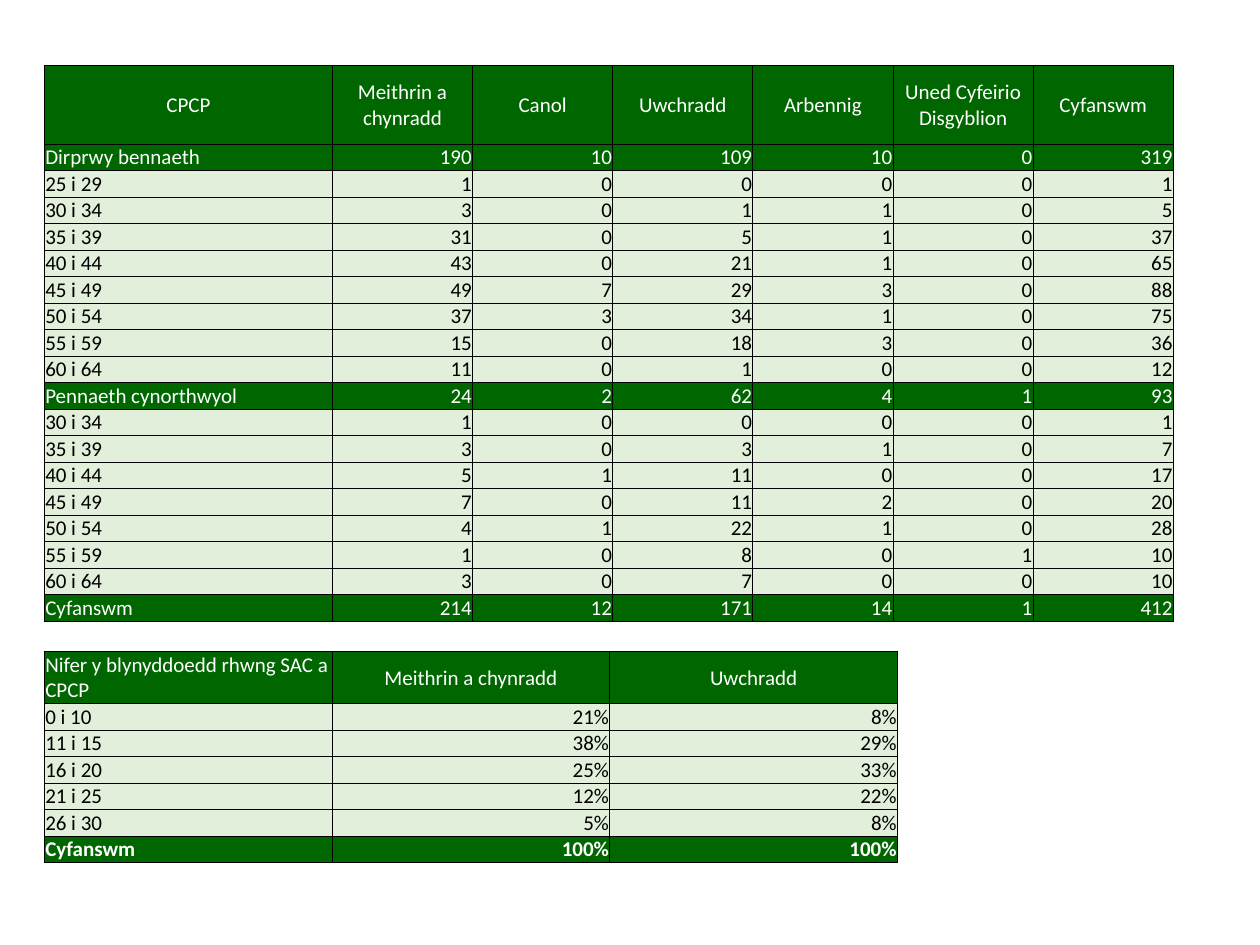
from lxml import etree
from pptx import Presentation
from pptx.dml.color import RGBColor
from pptx.enum.text import MSO_ANCHOR, PP_ALIGN
from pptx.oxml.ns import qn
from pptx.util import Pt

DARK_GREEN = RGBColor(0x00, 0x66, 0x00)
PALE_GREEN = RGBColor(0xE2, 0xEF, 0xDA)
WHITE = RGBColor(0xFF, 0xFF, 0xFF)
BLACK = RGBColor(0x00, 0x00, 0x00)
LEFT, CENTER, RIGHT = PP_ALIGN.LEFT, PP_ALIGN.CENTER, PP_ALIGN.RIGHT
TOP, MIDDLE, BOTTOM = MSO_ANCHOR.TOP, MSO_ANCHOR.MIDDLE, MSO_ANCHOR.BOTTOM
ROW_HEIGHT = 15.14
TABLE_LEFT = 25.4


def write_cell(cell, text, align=LEFT, anchor=TOP, fill=PALE_GREEN, color=BLACK, bold=False):
    cell.margin_left = cell.margin_right = cell.margin_top = Pt(0.5)
    cell.margin_bottom = 0
    cell.vertical_anchor = anchor
    paragraph = cell.text_frame.paragraphs[0]
    paragraph.alignment = align
    run = paragraph.add_run()
    run.text = text
    run.font.name = "Calibri"
    run.font.size = Pt(12)
    run.font.bold = bold
    run.font.color.rgb = color
    # Thin black borders come before the fill in the cell properties
    properties = cell._tc.get_or_add_tcPr()
    for side in ("a:lnL", "a:lnR", "a:lnT", "a:lnB"):
        line = etree.SubElement(properties, qn(side), w=str(Pt(0.5)))
        solid = etree.SubElement(line, qn("a:solidFill"))
        etree.SubElement(solid, qn("a:srgbClr"), val=str(BLACK))
    cell.fill.solid()
    cell.fill.fore_color.rgb = fill


def add_grid(slide, top, column_widths, header_height, row_count):
    heights = [header_height] + [ROW_HEIGHT] * (row_count - 1)
    grid = slide.shapes.add_table(row_count, len(column_widths), Pt(TABLE_LEFT), Pt(top),
                                  Pt(sum(column_widths)), Pt(sum(heights))).table
    grid.horz_banding = False
    for column, width in zip(grid.columns, column_widths):
        column.width = Pt(width)
    for row, height in zip(grid.rows, heights):
        row.height = Pt(height)
    return grid


prs = Presentation()
prs.slide_width, prs.slide_height = Pt(720), Pt(540)
slide = prs.slides.add_slide(prs.slide_layouts[6])

# Holders by role, age band and school sector
age_rows = [
    ("CPCP", "Meithrin a chynradd", "Canol", "Uwchradd", "Arbennig",
     "Uned Cyfeirio Disgyblion", "Cyfanswm"),
    ("Dirprwy bennaeth", 190, 10, 109, 10, 0, 319),
    ("25 i 29", 1, 0, 0, 0, 0, 1),
    ("30 i 34", 3, 0, 1, 1, 0, 5),
    ("35 i 39", 31, 0, 5, 1, 0, 37),
    ("40 i 44", 43, 0, 21, 1, 0, 65),
    ("45 i 49", 49, 7, 29, 3, 0, 88),
    ("50 i 54", 37, 3, 34, 1, 0, 75),
    ("55 i 59", 15, 0, 18, 3, 0, 36),
    ("60 i 64", 11, 0, 1, 0, 0, 12),
    ("Pennaeth cynorthwyol", 24, 2, 62, 4, 1, 93),
    ("30 i 34", 1, 0, 0, 0, 0, 1),
    ("35 i 39", 3, 0, 3, 1, 0, 7),
    ("40 i 44", 5, 1, 11, 0, 0, 17),
    ("45 i 49", 7, 0, 11, 2, 0, 20),
    ("50 i 54", 4, 1, 22, 1, 0, 28),
    ("55 i 59", 1, 0, 8, 0, 1, 10),
    ("60 i 64", 3, 0, 7, 0, 0, 10),
    ("Cyfanswm", 214, 12, 171, 14, 1, 412),
]
ages = add_grid(slide, 37.4, [164.6] + [80.1] * 6, 45, len(age_rows))
for r, values in enumerate(age_rows):
    is_age_band = " i " in values[0]
    style = {} if is_age_band else {"anchor": MIDDLE, "fill": DARK_GREEN, "color": WHITE}
    for c, value in enumerate(values):
        align = CENTER if r == 0 else RIGHT if c else LEFT
        write_cell(ages.cell(r, c), str(value), align=align, **style)

# Years between the two qualifications
year_rows = [
    ("Nifer y blynyddoedd rhwng SAC a CPCP", "Meithrin a chynradd", "Uwchradd"),
    ("0 i 10", "21%", "8%"),
    ("11 i 15", "38%", "29%"),
    ("16 i 20", "25%", "33%"),
    ("21 i 25", "12%", "22%"),
    ("26 i 30", "5%", "8%"),
    ("Cyfanswm", "100%", "100%"),
]
years = add_grid(slide, 372.3, [164.4, 158.7, 164.4], 29.3, len(year_rows))
total_row = len(year_rows) - 1
for r, values in enumerate(year_rows):
    style = {"fill": DARK_GREEN, "color": WHITE} if r in (0, total_row) else {}
    for c, value in enumerate(values):
        if r == 0:
            align, anchor = CENTER if c else LEFT, MIDDLE
        elif r == total_row:
            align, anchor = RIGHT if c else LEFT, BOTTOM if c == 2 else TOP
        else:
            align, anchor = (RIGHT, MIDDLE) if c else (LEFT, TOP)
        write_cell(years.cell(r, c), value, align=align, anchor=anchor,
                   bold=r == total_row, **style)

prs.save("out.pptx")
